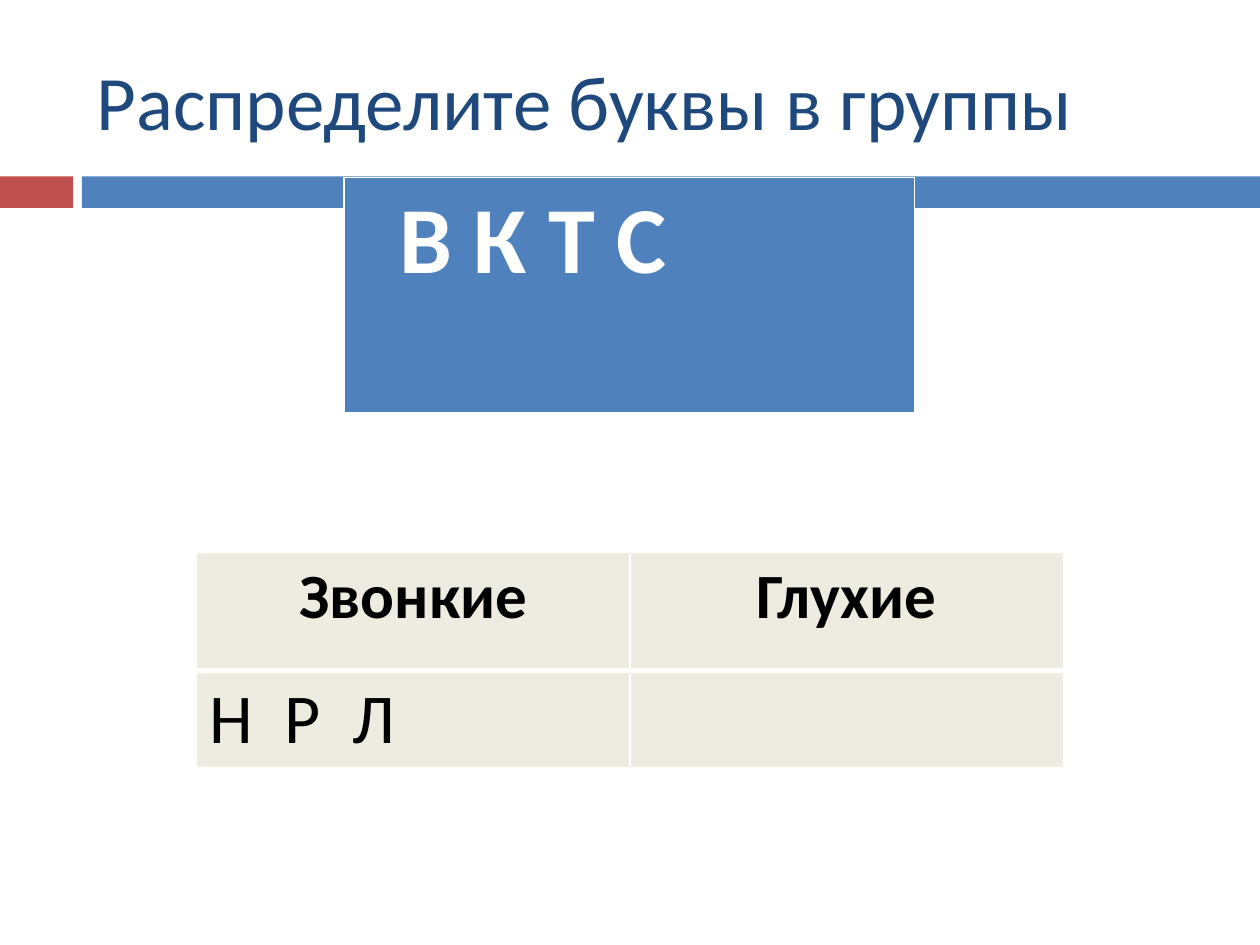
"""Build a slide that asks pupils to sort letters into two groups."""
from lxml.etree import SubElement
from pptx import Presentation
from pptx.dml.color import RGBColor
from pptx.enum.shapes import MSO_SHAPE as SHAPE
from pptx.enum.text import MSO_ANCHOR as ANCHOR, PP_ALIGN as ALIGN
from pptx.oxml.ns import qn
from pptx.util import Inches, Pt

FONT = "Calibri"
BLUE, RED, NAVY = "4F81BD", "C0504D", "1F497D"
CREAM, WHITE, BLACK = "EEECE1", "FFFFFF", "000000"
TITLE = "Распределите буквы в группы"
BARS = [(0, 0.58, RED), (0.65, 9.35, BLUE)]
LETTERS = dict(
    at=(2.73, 1.41), width=4.53, heights=[1.88], fill=BLUE, color=WHITE,
    header=True, indent=0.44, rows=[["В К Т С"]],
    styles=[(54, True, ALIGN.LEFT)])
GROUPS = dict(
    at=(1.56, 4.38), width=6.88, heights=[0.94, 0.77], fill=CREAM, color=BLACK,
    header=False, indent=0.1, rows=[["Звонкие", "Глухие"], ["Н  Р  Л", ""]],
    styles=[(36, True, ALIGN.CENTER), (40, False, ALIGN.LEFT)])


def rgb(value):
    return RGBColor.from_string(value)


def write(p, text, size, color, bold=False, align=ALIGN.LEFT):
    p.text, p.alignment = text, align
    p.font.name, p.font.size, p.font.bold = FONT, Pt(size), bold
    p.font.color.rgb = rgb(color)


def add_borders(cell, bottom):
    pr = cell._tc.get_or_add_tcPr()
    for i, (side, width) in enumerate([("L", 1), ("R", 1), ("T", 1), ("B", bottom)]):
        ln = pr.makeelement(qn(f"a:ln{side}"), {"w": str(Pt(width))})
        fill = SubElement(ln, qn("a:solidFill"))
        SubElement(fill, qn("a:srgbClr"), val=WHITE)
        pr.insert(i, ln)


def add_grid(s, at, width, heights, fill, color, header, indent, rows, styles):
    size = len(rows), len(rows[0])
    box = [Inches(v) for v in (*at, width, sum(heights))]
    table = s.shapes.add_table(*size, *box).table
    table.first_row, table.horz_banding = header, False
    for i, (texts, height, style) in enumerate(zip(rows, heights, styles)):
        points, bold, align = style
        table.rows[i].height = Inches(height)
        for j, text in enumerate(texts):
            cell = table.cell(i, j)
            cell.margin_left = Inches(indent)
            cell.fill.solid()
            cell.fill.fore_color.rgb = rgb(fill)
            add_borders(cell, 3 if i == 0 else 1)
            write(cell.text_frame.paragraphs[0], text, points, color, bold, align)


prs = Presentation()
prs.slide_width, prs.slide_height = Inches(10), Inches(7.5)
s = prs.slides.add_slide(prs.slide_layouts[6])

for left, width, color in BARS:
    sp = s.shapes.add_shape(
        SHAPE.RECTANGLE, Inches(left), Inches(1.4), Inches(width), Inches(0.25))
    sp.shadow.inherit = False
    sp.fill.solid()
    sp.fill.fore_color.rgb = rgb(color)
    sp.line.fill.background()

tf = s.shapes.add_textbox(
    Inches(0.67), Inches(0.25), Inches(8.92), Inches(1.08)).text_frame
tf.word_wrap, tf.vertical_anchor = True, ANCHOR.MIDDLE
write(tf.paragraphs[0], TITLE, 44, NAVY)

for grid in (LETTERS, GROUPS):
    add_grid(s, **grid)

prs.save("out.pptx")
